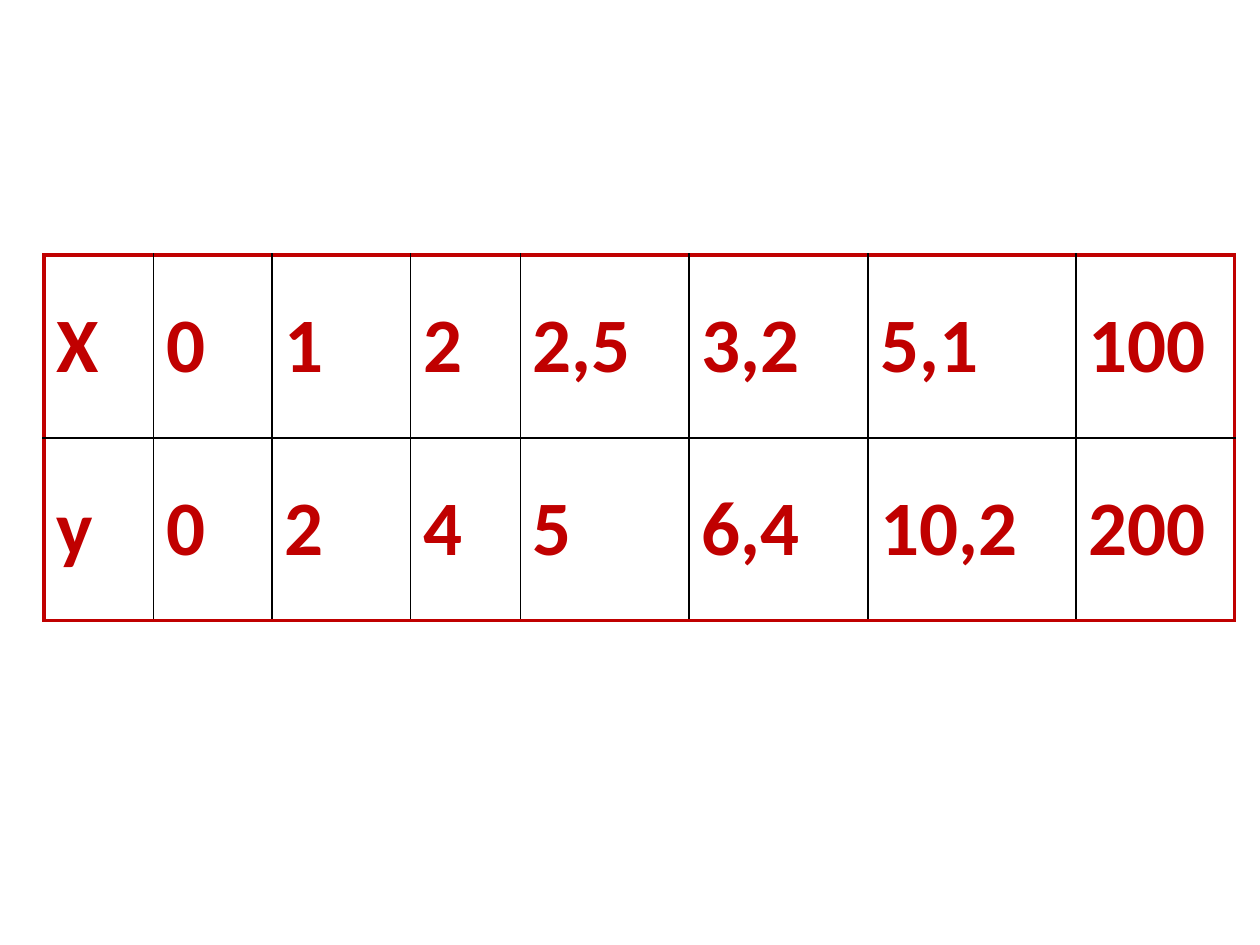
from dataclasses import dataclass

from lxml.etree import SubElement
from pptx import Presentation
from pptx.dml.color import RGBColor
from pptx.enum.text import MSO_ANCHOR
from pptx.oxml.ns import qn
from pptx.table import Table, _Cell
from pptx.util import Inches, Pt

COLORS = {"accent": "C00000", "grid": "000000", "paper": "FFFFFF"}
SLIDE_WIDTH, SLIDE_HEIGHT = Inches(10), Inches(7.5)
TABLE_LEFT, TABLE_TOP = 0.035, 0.27  # shares of the slide's size
ROW_HEIGHT = Inches(1.45)
COLUMN_WIDTHS = [Inches(w) for w in (0.87, 0.94, 1.1, 0.87, 1.34, 1.42, 1.65, 1.26)]
VALUES = [
    ["X", "0", "1", "2", "2,5", "3,2", "5,1", "100"],
    ["у", "0", "2", "4", "5", "6,4", "10,2", "200"],
]


@dataclass(frozen=True)
class Border:
    color: str
    points: float


OUTER = Border("accent", 2.25)
INNER = Border("grid", 1)


def draw_border(cell: _Cell, side: str, border: Border) -> None:
    properties = cell._tc.get_or_add_tcPr()
    line = SubElement(properties, qn(f"a:ln{side}"), w=str(Pt(border.points)))
    fill = SubElement(line, qn("a:solidFill"))
    SubElement(fill, qn("a:srgbClr"), val=COLORS[border.color])


def fill_cell(table: Table, row: int, column: int) -> None:
    """Write one value, with a heavy border where the cell meets the table's edge."""
    cell = table.cell(row, column)
    at_edge = {
        "L": column == 0,
        "R": column == len(COLUMN_WIDTHS) - 1,
        "T": row == 0,
        "B": row == len(VALUES) - 1,
    }
    for side, is_outer in at_edge.items():
        draw_border(cell, side, OUTER if is_outer else INNER)
    cell.fill.solid()
    cell.fill.fore_color.rgb = RGBColor.from_string(COLORS["paper"])
    cell.vertical_anchor = MSO_ANCHOR.MIDDLE
    cell.text_frame.text = VALUES[row][column]
    font = cell.text_frame.paragraphs[0].runs[0].font
    font.name, font.size, font.bold = "Calibri", Pt(44), True
    font.color.rgb = RGBColor.from_string(COLORS["accent"])


def main() -> None:
    presentation = Presentation()
    presentation.slide_width, presentation.slide_height = SLIDE_WIDTH, SLIDE_HEIGHT
    slide = presentation.slides.add_slide(presentation.slide_layouts[6])
    table = slide.shapes.add_table(
        len(VALUES), len(COLUMN_WIDTHS),
        int(SLIDE_WIDTH * TABLE_LEFT), int(SLIDE_HEIGHT * TABLE_TOP),
        sum(COLUMN_WIDTHS), ROW_HEIGHT * len(VALUES),
    ).table
    table.first_row = table.horz_banding = False
    for column, width in zip(table.columns, COLUMN_WIDTHS):
        column.width = width
    for row in range(len(VALUES)):
        for column in range(len(COLUMN_WIDTHS)):
            fill_cell(table, row, column)
    presentation.save("out.pptx")


if __name__ == "__main__":
    main()
